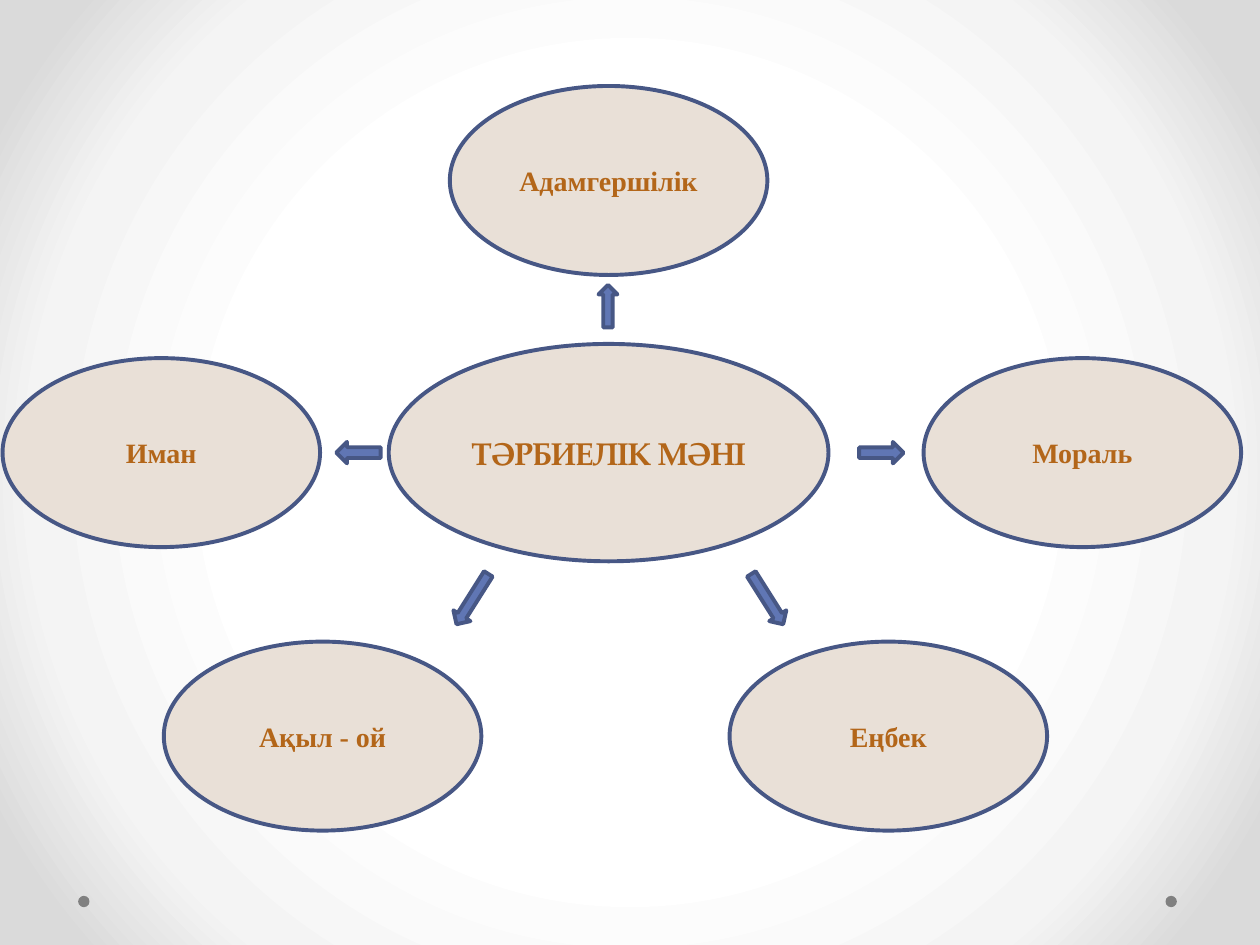
import pptx
import pptx.dml.color
import pptx.enum.shapes
import pptx.enum.text
import pptx.oxml
import pptx.oxml.ns
import pptx.util

SHAPES = pptx.enum.shapes.MSO_SHAPE
WIDTH, HEIGHT = 10, 7.5
BODY_FONT, HUB_FONT = "Times New Roman", "TeX Gyre Pagella"
PALE, NAVY, BLUE, BROWN, GRAY = "E9E0D7", "475785", "6076B4", "B36619", "808080"

# Themes: label, centre of the ellipse as shares of the slide
THEMES = [
    ("Ақыл - ой", 0.256, 0.779),
    ("Иман", 0.128, 0.479),
    ("Еңбек", 0.705, 0.779),
    ("Мораль", 0.859, 0.479),
    ("Адамгершілік", 0.483, 0.191),
]
THEME_SIZE = (0.252, 0.2)
HUB_BOX = (0.483, 0.479, 0.349, 0.23)

# Arrows: centre, width and length as shares, then rotation of a down arrow
ARROWS = [
    (0.4825, 0.324, 0.015, 0.045, 180),
    (0.375, 0.634, 0.016, 0.063, 32.3),
    (0.2845, 0.479, 0.017, 0.047, 90),
    (0.609, 0.634, 0.016, 0.063, 327.7),
    (0.6995, 0.479, 0.017, 0.047, 270),
]


def color(value):
    return pptx.dml.color.RGBColor.from_string(value)


def add_centred(page, kind, box, fill, line=None):
    """Place a preset shape by its centre and size, given as slide shares."""
    x, y, width, height = box
    shape = page.shapes.add_shape(
        kind,
        pptx.util.Inches((x - width / 2) * WIDTH),
        pptx.util.Inches((y - height / 2) * HEIGHT),
        pptx.util.Inches(width * WIDTH),
        pptx.util.Inches(height * HEIGHT),
    )
    shape.shadow.inherit = False
    shape.fill.solid()
    shape.fill.fore_color.rgb = color(fill)
    if line:
        shape.line.color.rgb = color(line)
        shape.line.width = pptx.util.Pt(2.25)
    else:
        shape.line.fill.background()
    return shape


def add_bubble(page, label, box, font, size):
    bubble = add_centred(page, SHAPES.OVAL, box, PALE, NAVY)
    frame = bubble.text_frame
    frame.text = label
    frame.word_wrap = True
    frame.vertical_anchor = pptx.enum.text.MSO_ANCHOR.MIDDLE
    para = frame.paragraphs[0]
    para.alignment = pptx.enum.text.PP_ALIGN.CENTER
    span = para.runs[0]
    span.font.name = font
    span.font.size = pptx.util.Pt(size)
    span.font.bold = True
    span.font.color.rgb = color(BROWN)


def add_arrow(page, box, rotation):
    arrow = add_centred(page, SHAPES.DOWN_ARROW, box, BLUE, NAVY)
    arrow.rotation = rotation


def paint_background(page):
    """Radial gradient from a white centre to gray corners."""
    page.background.fill.gradient()
    gradient = page.element.find(".//" + pptx.oxml.ns.qn("a:gradFill"))
    stops = "".join(
        f'<a:gs pos="{share * 1000}"><a:srgbClr val="{value}"/></a:gs>'
        for share, value in [(50, "FFFFFF"), (76, "F4F4F4"), (92, "DADADA")]
    )
    radial = pptx.oxml.parse_xml(
        f'<a:gradFill {pptx.oxml.ns.nsdecls("a")} rotWithShape="1">'
        f'<a:gsLst>{stops}</a:gsLst><a:path path="circle">'
        '<a:fillToRect l="50000" t="50000" r="50000" b="50000"/>'
        "</a:path></a:gradFill>"
    )
    gradient.getparent().replace(gradient, radial)


def add_corner_dots(page):
    for x in (0.9295, 0.0665):
        add_centred(page, SHAPES.OVAL, (x, 0.954, 0.009, 0.012), GRAY)


def add_diagram(page):
    add_bubble(page, "ТӘРБИЕЛІК МӘНІ", HUB_BOX, HUB_FONT, 18)
    for label, x, y in THEMES:
        add_bubble(page, label, (x, y, *THEME_SIZE), BODY_FONT, 16)
    for *box, rotation in ARROWS:
        add_arrow(page, box, rotation)


def main():
    deck = pptx.Presentation()
    deck.slide_width = pptx.util.Inches(WIDTH)
    deck.slide_height = pptx.util.Inches(HEIGHT)
    page = deck.slides.add_slide(deck.slide_layouts[6])
    paint_background(page)
    add_corner_dots(page)
    add_diagram(page)
    deck.save("out.pptx")


if __name__ == "__main__":
    main()
